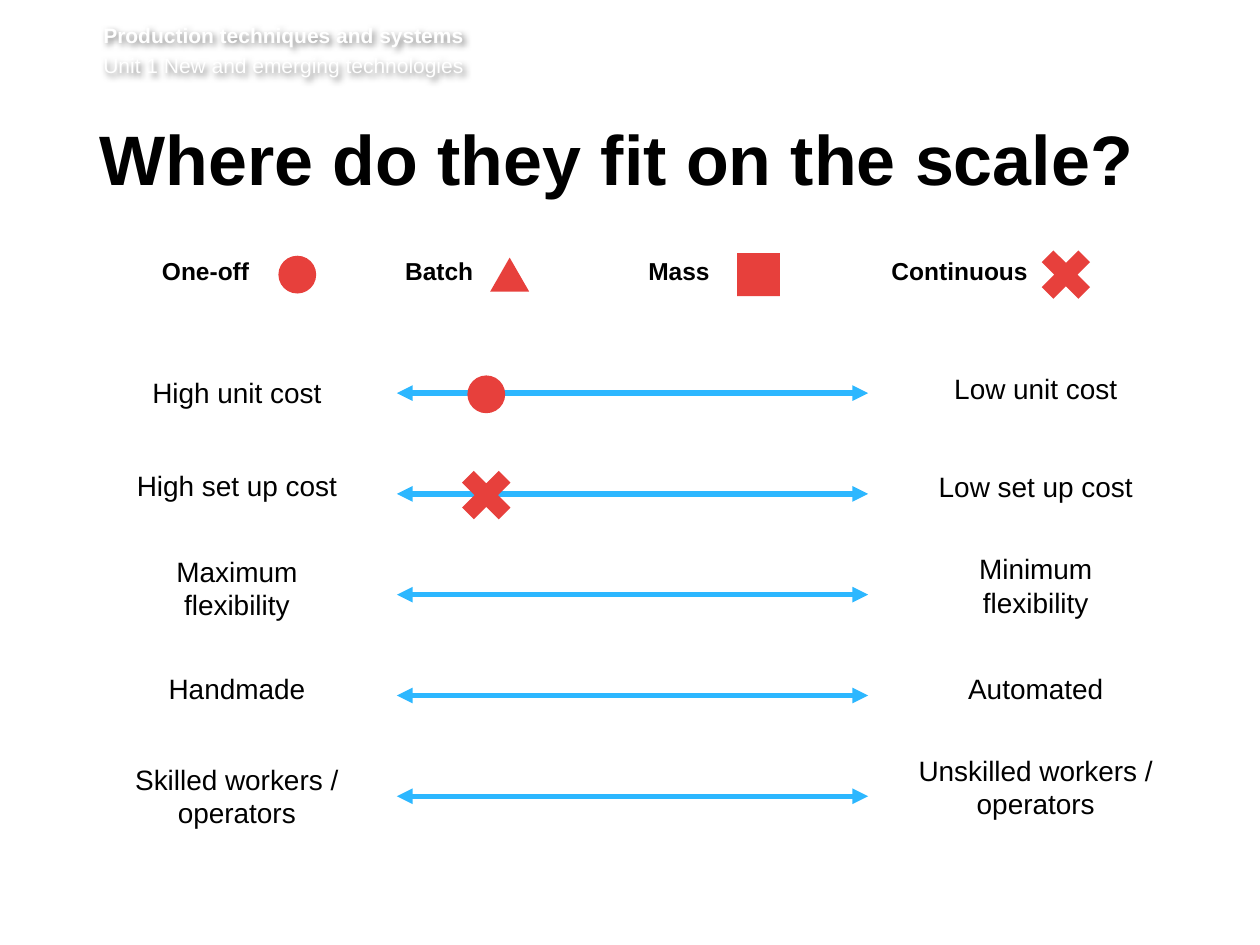
from lxml.etree import SubElement
from pptx import Presentation
from pptx.dml.color import RGBColor
from pptx.enum.shapes import MSO_CONNECTOR, MSO_SHAPE
from pptx.enum.text import MSO_ANCHOR, PP_ALIGN
from pptx.oxml.ns import qn
from pptx.util import Inches, Pt

WHITE = RGBColor(0xFF, 0xFF, 0xFF)
BLACK = RGBColor(0x00, 0x00, 0x00)
RED = RGBColor(0xE7, 0x40, 0x3C)
BLUE = RGBColor(0x2C, 0xB7, 0xFF)

deck = Presentation()
deck.slide_width = Inches(10)
deck.slide_height = Inches(7.5)
col = deck.slide_width / 100
row = deck.slide_height / 75
slide = deck.slides.add_slide(deck.slide_layouts[6])
shapes = slide.shapes


def add_text(x, y, wide, high, lines, size, color=BLACK, pad=(1, 0.5, 1, 0.5)):
    box = shapes.add_textbox(int(x * col), int(y * row), int(wide * col), int(high * row))
    frame = box.text_frame
    frame.word_wrap = True
    frame.margin_left, frame.margin_top, frame.margin_right, frame.margin_bottom = [
        int(side * col) for side in pad]
    for i, (words, bold) in enumerate(lines):
        para = frame.add_paragraph() if i else frame.paragraphs[0]
        run = para.add_run()
        run.text = words
        run.font.name = "Arial"
        run.font.size = Pt(size)
        run.font.bold = bold
        run.font.color.rgb = color
    return box


def add_mark(kind, x, y, wide, high):
    mark = shapes.add_shape(kind, int((x - wide / 2) * col), int((y - high / 2) * row),
                            int(wide * col), int(high * row))
    mark.shadow.inherit = False
    mark.fill.solid()
    mark.fill.fore_color.rgb = RED
    mark.line.fill.background()


head = add_text(8.2, 1.8, 88.2, 4.9,
                [("Production techniques and systems", True),
                 ("Unit 1 New and emerging technologies", False)],
                12, WHITE, (0, 0, 0, 0.5))
head.text_frame.paragraphs[1].space_before = Pt(2.9)
glow = SubElement(SubElement(head.element.spPr, qn("a:effectLst")), qn("a:outerShdw"),
                  blurRad="50800", dist="19050", dir="2700000", algn="tl", rotWithShape="0")
shade = SubElement(glow, qn("a:srgbClr"), val="000000")
SubElement(shade, qn("a:alpha"), val="50000")

title = add_text(7.9, 9.9, 85.5, 7.3, [("Where do they fit on the scale?", True)],
                 40, BLACK, (0, 0.5, 1, 0.5))
title.text_frame.paragraphs[0].line_spacing = Pt(39)
title.text_frame.paragraphs[0].space_after = Pt(15)

legend = [
    ("One-off", 11.1, MSO_SHAPE.OVAL, 23.6, 21.8, 3, 3),
    ("Batch", 11.1, MSO_SHAPE.ISOSCELES_TRIANGLE, 40.45, 21.8, 3.1, 2.7),
    ("Mass", 11.1, MSO_SHAPE.RECTANGLE, 60.2, 21.8, 3.4, 3.4),
    ("Continuous", 13.9, MSO_SHAPE.MATH_MULTIPLY, 84.6, 21.8, 5.6, 5.6),
]
for i, (name, wide, *mark) in enumerate(legend):
    label = add_text(12.85 + 19.3 * i, 19.5, wide, 4.5, [(name, True)],
                     14, BLACK, (0, 0, 1, 0.5))
    label.text_frame.vertical_anchor = MSO_ANCHOR.MIDDLE
    label.text_frame.paragraphs[0].space_after = Pt(14)
    add_mark(*mark)

scales = [
    ("High unit cost", 29.3, 18.8, "Low unit cost", 29, 18.8),
    ("High set up cost", 36.7, 18.8, "Low set up cost", 36.8, 18.8),
    ("Maximum flexibility", 43.5, 18.8, "Minimum flexibility", 43.3, 18.8),
    ("Handmade", 52.8, 18.8, "Automated", 52.8, 18.8),
    ("Skilled workers / operators", 60, 22.7, "Unskilled workers / operators", 59.3, 25.4),
]
for i, (left, top, wide, right, peak, span) in enumerate(scales):
    for words, mid, y, size in ((left, 18.8, top, wide), (right, 82.2, peak, span)):
        high = 7.2 if i in (2, 4) else 3.9
        label = add_text(mid - size / 2, y, size, high, [(words, False)], 16)
        label.text_frame.paragraphs[0].alignment = PP_ALIGN.CENTER
    level = int((31.2 + 8 * i) * row)
    arrow = shapes.add_connector(MSO_CONNECTOR.STRAIGHT, int(31.5 * col), level,
                                 int(68.9 * col), level)
    arrow.line.color.rgb = BLUE
    arrow.line.width = Pt(3)
    stroke = arrow.line._get_or_add_ln()
    for end in ("a:headEnd", "a:tailEnd"):
        SubElement(stroke, qn(end), type="triangle")
    SubElement(arrow.element.spPr, qn("a:effectLst"))

add_mark(MSO_SHAPE.OVAL, 38.6, 31.3, 3, 3)
add_mark(MSO_SHAPE.MATH_MULTIPLY, 38.6, 39.3, 5.6, 5.6)

deck.save("out.pptx")
